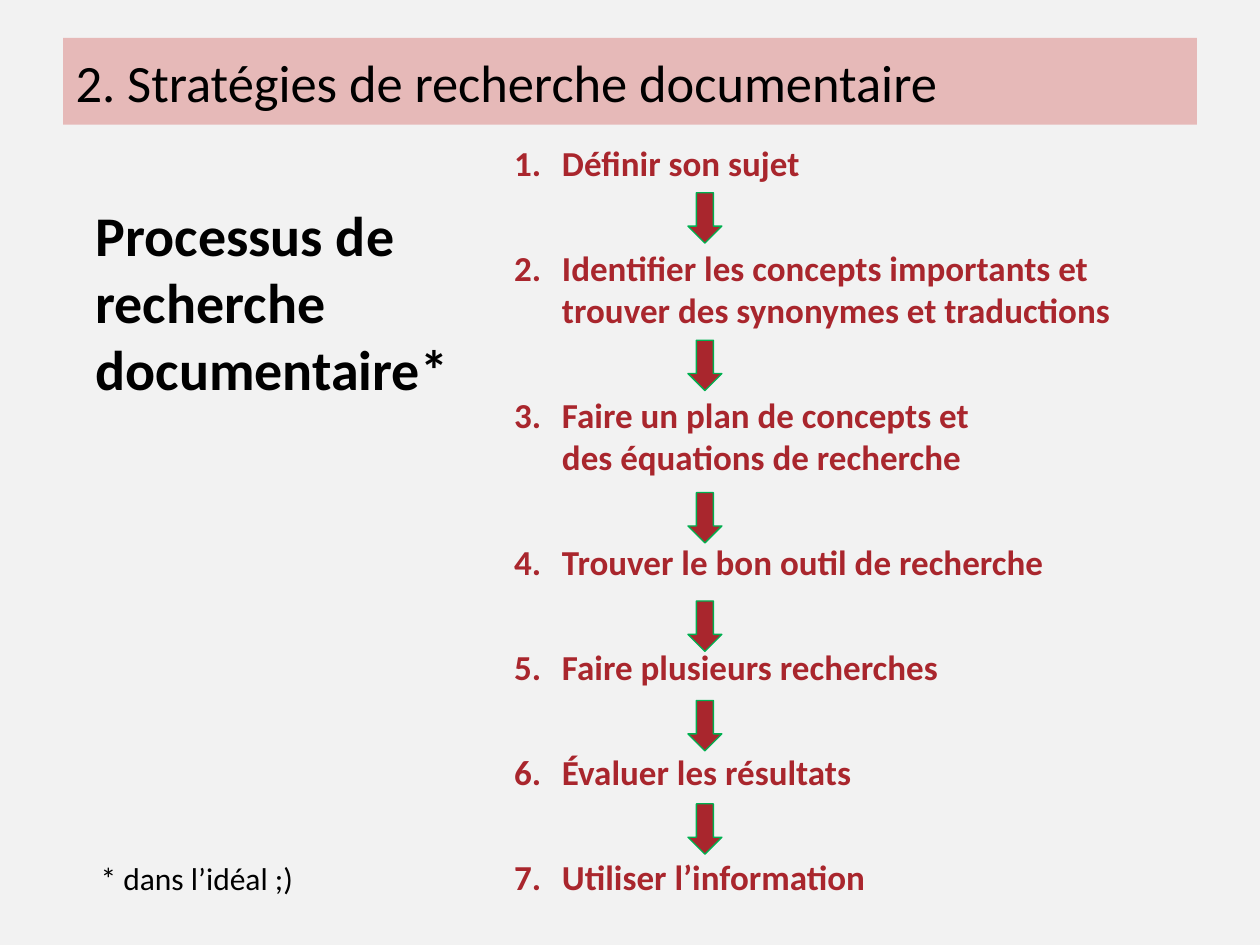
import copy

import pptx
import pptx.dml.color
import pptx.enum.shapes
import pptx.enum.text
import pptx.oxml
import pptx.oxml.ns
import pptx.util

Inches = pptx.util.Inches
Pt = pptx.util.Pt

# Content
TITLE = "2. Stratégies de recherche documentaire"
HEADING = "Processus de recherche documentaire*"
FOOTNOTE = "* dans l’idéal ;)"
STEPS = [
    "Définir son sujet",
    "Identifier les concepts importants et \vtrouver des synonymes et traductions",
    "Faire un plan de concepts et \vdes équations de recherche",
    "Trouver le bon outil de recherche",
    "Faire plusieurs recherches",
    "Évaluer les résultats",
    "Utiliser l’information",
]
ARROW_TOPS = [1.53, 2.7, 3.91, 4.77, 5.56, 6.38]

# Formats
COLORS = {"background": "F2F2F2", "banner": "E6B9B8", "step": "A9262D",
          "arrow_line": "00B050", "text": "000000"}
FONTS = {
    "title": {"size": Pt(30), "bold": False},
    "step": {"size": Pt(20), "bold": True},
    "heading": {"size": Pt(32), "bold": True},
    "footnote": {"size": Pt(18), "bold": False},
}


def rgb(name):
    return pptx.dml.color.RGBColor.from_string(COLORS[name])


def paint(fill, color):
    fill.solid()
    fill.fore_color.rgb = rgb(color)


def place(part, left, top, width, height):
    part.left, part.top = Inches(left), Inches(top)
    part.width, part.height = Inches(width), Inches(height)


def write(paragraph, text, style, color="text"):
    paragraph.text = text
    paragraph.alignment = pptx.enum.text.PP_ALIGN.LEFT
    paragraph.space_before = Pt(0)
    for run in paragraph.runs:
        for key, value in {"name": "Calibri", **FONTS[style]}.items():
            setattr(run.font, key, value)
        run.font.color.rgb = rgb(color)
    # Line breaks take the same format as the text around them
    for line_break in paragraph._p.findall(pptx.oxml.ns.qn("a:br")):
        line_break.append(copy.deepcopy(paragraph.runs[0].font._element))


def number(paragraph):
    properties = paragraph._p.get_or_add_pPr()
    properties.set("marL", str(Inches(0.79)))
    properties.set("indent", str(Inches(-0.38)))
    bullet_font = pptx.oxml.parse_xml(
        f'<a:buFont {pptx.oxml.ns.nsdecls("a")} typeface="+mj-lt"/>')
    numbering = pptx.oxml.parse_xml(
        f'<a:buAutoNum {pptx.oxml.ns.nsdecls("a")} type="arabicPeriod"/>')
    properties.extend([bullet_font, numbering])


def add_note(slide, text, style, box, indent=0):
    note = slide.shapes.add_textbox(*map(Inches, box))
    note.text_frame.word_wrap = True
    paragraph = note.text_frame.paragraphs[0]
    write(paragraph, text, style)
    paragraph._p.get_or_add_pPr().set("marL", str(Inches(indent)))


def main():
    deck = pptx.Presentation()
    deck.slide_width, deck.slide_height = Inches(10), Inches(7.5)
    slide = deck.slides.add_slide(deck.slide_layouts[1])
    paint(slide.background.fill, "background")

    # Title banner
    banner = slide.shapes.title
    place(banner, 0.5, 0.3, 9, 0.69)
    paint(banner.fill, "banner")
    banner.text_frame.auto_size = pptx.enum.text.MSO_AUTO_SIZE.NONE
    banner.text_frame.vertical_anchor = pptx.enum.text.MSO_ANCHOR.MIDDLE
    write(banner.text_frame.paragraphs[0], TITLE, "title")

    # Numbered steps
    steps = slide.placeholders[1]
    place(steps, 3.57, 1.07, 5.51, 6.27)
    frame = steps.text_frame
    frame.auto_size = pptx.enum.text.MSO_AUTO_SIZE.NONE
    for index, step in enumerate(STEPS):
        paragraph = frame.add_paragraph() if index else frame.paragraphs[0]
        paragraph.space_after = Pt(36)
        write(paragraph, step, "step", "step")
        number(paragraph)

    # Arrows between the steps
    for top in ARROW_TOPS:
        arrow = slide.shapes.add_shape(
            pptx.enum.shapes.MSO_SHAPE.DOWN_ARROW,
            *map(Inches, (5.46, top, 0.27, 0.4)))
        arrow.shadow.inherit = False
        paint(arrow.fill, "step")
        paint(arrow.line.fill, "arrow_line")
        arrow.line.width = Pt(0.75)

    # Heading and footnote on the left
    add_note(slide, HEADING, "heading", (0.5, 1.54, 3.2, 1.72), indent=0.16)
    add_note(slide, FOOTNOTE, "footnote", (0.7, 6.77, 1.8, 0.4))

    deck.save("out.pptx")


if __name__ == "__main__":
    main()
